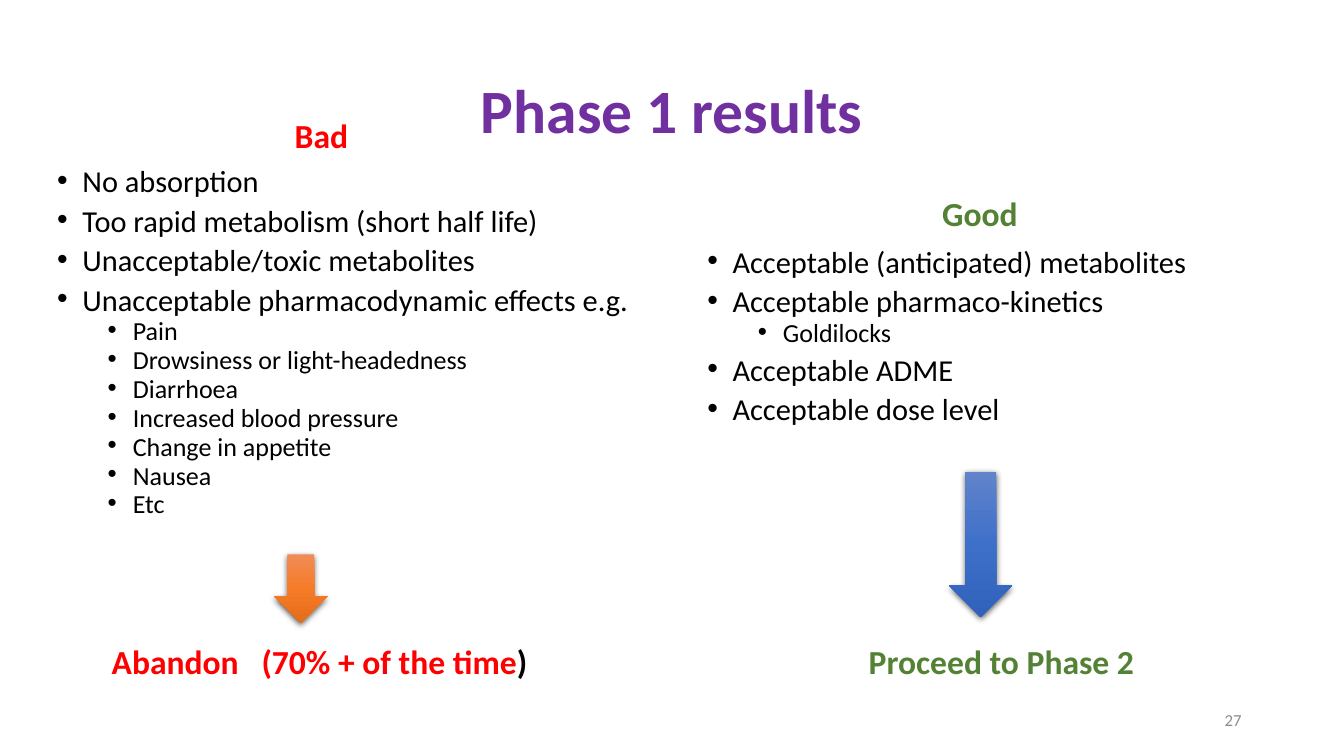
from pptx import Presentation
from pptx.dml.color import RGBColor
from pptx.enum.shapes import MSO_SHAPE as Shape
from pptx.enum.text import MSO_ANCHOR as Anchor, PP_ALIGN as Align
from pptx.oxml import parse_xml
from pptx.oxml.ns import nsdecls, qn
from pptx.util import Pt

RED, GREEN, PURPLE, BLACK, GREY = "FF0000", "548235", "7030A0", "000000", "8C8C8C"

BAD = [
    (0, "No absorption"),
    (0, "Too rapid metabolism (short half life)"),
    (0, "Unacceptable/toxic metabolites"),
    (0, "Unacceptable pharmacodynamic effects e.g."),
    (1, "Pain"),
    (1, "Drowsiness or light-headedness"),
    (1, "Diarrhoea"),
    (1, "Increased blood pressure"),
    (1, "Change in appetite"),
    (1, "Nausea"),
    (1, "Etc"),
]
GOOD = [
    (0, "Acceptable (anticipated) metabolites"),
    (0, "Acceptable pharmaco-kinetics"),
    (1, "Goldilocks"),
    (0, "Acceptable ADME"),
    (0, "Acceptable dose level"),
]


def color(code):
    return RGBColor.from_string(code)


def style(font, size, code, bold=False):
    font.name, font.size, font.bold = "Calibri", Pt(size), bold
    font.color.rgb = color(code)


def frame(slide, box, anchor=Anchor.TOP):
    """Add a wrapping text box and return its text frame."""
    text = slide.shapes.add_textbox(*map(Pt, box)).text_frame
    text.word_wrap = True
    text.vertical_anchor = anchor
    return text


def label(slide, box, words, size, code, bold=True,
          align=Align.CENTER, anchor=Anchor.MIDDLE):
    para = frame(slide, box, anchor).paragraphs[0]
    para.text, para.alignment, para.line_spacing = words, align, 0.9
    style(para.font, size, code, bold)


def bullets(slide, box, items):
    text = frame(slide, box)
    for num, (level, words) in enumerate(items):
        para = text.add_paragraph() if num else text.paragraphs[0]
        para.text, para.level, para.line_spacing = words, level, 0.7
        para.space_before = Pt((5 if level else 10) if num else 0)
        props = para._p.get_or_add_pPr()
        props.set("marL", str(Pt(18 + 36 * level)))
        props.set("indent", str(-Pt(18)))
        props.append(parse_xml(f'<a:buFont {nsdecls("a")} typeface="Arial"/>'))
        props.append(parse_xml(f'<a:buChar {nsdecls("a")} char="•"/>'))
        style(para.font, 18.6 if level else 21.7, BLACK)


def arrow(slide, box, shades):
    """Add a down arrow with a vertical gradient and a soft shadow."""
    shape = slide.shapes.add_shape(Shape.DOWN_ARROW, *map(Pt, box))
    shape.line.fill.background()
    shape.shadow.inherit = False
    stops = "".join(
        f'<a:gs pos="{num * 50000}"><a:srgbClr val="{code}"/></a:gs>'
        for num, code in enumerate(shades))
    props = shape._element.spPr
    props.find(qn("a:prstGeom")).addnext(parse_xml(
        f'<a:gradFill {nsdecls("a")} rotWithShape="1"><a:gsLst>{stops}</a:gsLst>'
        '<a:lin ang="5400000" scaled="0"/></a:gradFill>'))
    props.find(qn("a:effectLst")).append(parse_xml(
        f'<a:outerShdw {nsdecls("a")} blurRad="{Pt(4.5)}" dist="{Pt(1.5)}" '
        'dir="5400000" algn="ctr" rotWithShape="0"><a:srgbClr val="000000">'
        '<a:alpha val="63000"/></a:srgbClr></a:outerShdw>'))


def verdict(slide, box, parts, tabs):
    """Add one line of coloured runs, set apart by tab stops."""
    para = frame(slide, box).paragraphs[0]
    stops = "".join(f'<a:tab pos="{Pt(tab)}" algn="l"/>' for tab in tabs)
    para._p.get_or_add_pPr().append(
        parse_xml(f'<a:tabLst {nsdecls("a")}>{stops}</a:tabLst>'))
    for words, code in parts:
        run = para.add_run()
        run.text = words
        style(run.font, 24, code, True)


def results(slide, box):
    left, top, width, height = box
    label(slide, (left + 66, top + 28.8, width - 132, 104.4),
          "Phase 1 results", 44, PURPLE)
    label(slide, (left + 26.6, top + 49.7, 406, 64.8), "Bad", 24, RED,
          anchor=Anchor.BOTTOM)
    bullets(slide, (left + 33.8, top + 119.5, 430, 290), BAD)
    label(slide, (left + 496, top + 105.8, 408, 64.8), "Good", 24, GREEN,
          anchor=Anchor.BOTTOM)
    bullets(slide, (left + 498.2, top + 177.1, 528, 186.5), GOOD)
    label(slide, (left + 678, top + 500.4, 216, 28.8), "27", 12, GREY, False,
          Align.RIGHT)
    verdict(slide, (left + 72.7, top + 454.3, 882, 36),
            [("Abandon\t(70% + of the time", RED), (")\t", BLACK),
             ("Proceed to Phase 2", GREEN)], (107, 540.7))
    arrow(slide, (left + 195.8, top + 396, 38.2, 49),
          ("F18C57", "F67B28", "E56C19"))
    arrow(slide, (left + 678.2, top + 337, 44.6, 103.7),
          ("6183CB", "3E70CA", "3062BB"))


def main():
    deck = Presentation()
    deck.slide_width, deck.slide_height = Pt(960), Pt(540)
    slide = deck.slides.add_slide(deck.slide_layouts[6])
    results(slide, (0, 0, 960, 540))
    deck.save("out.pptx")


if __name__ == "__main__":
    main()
